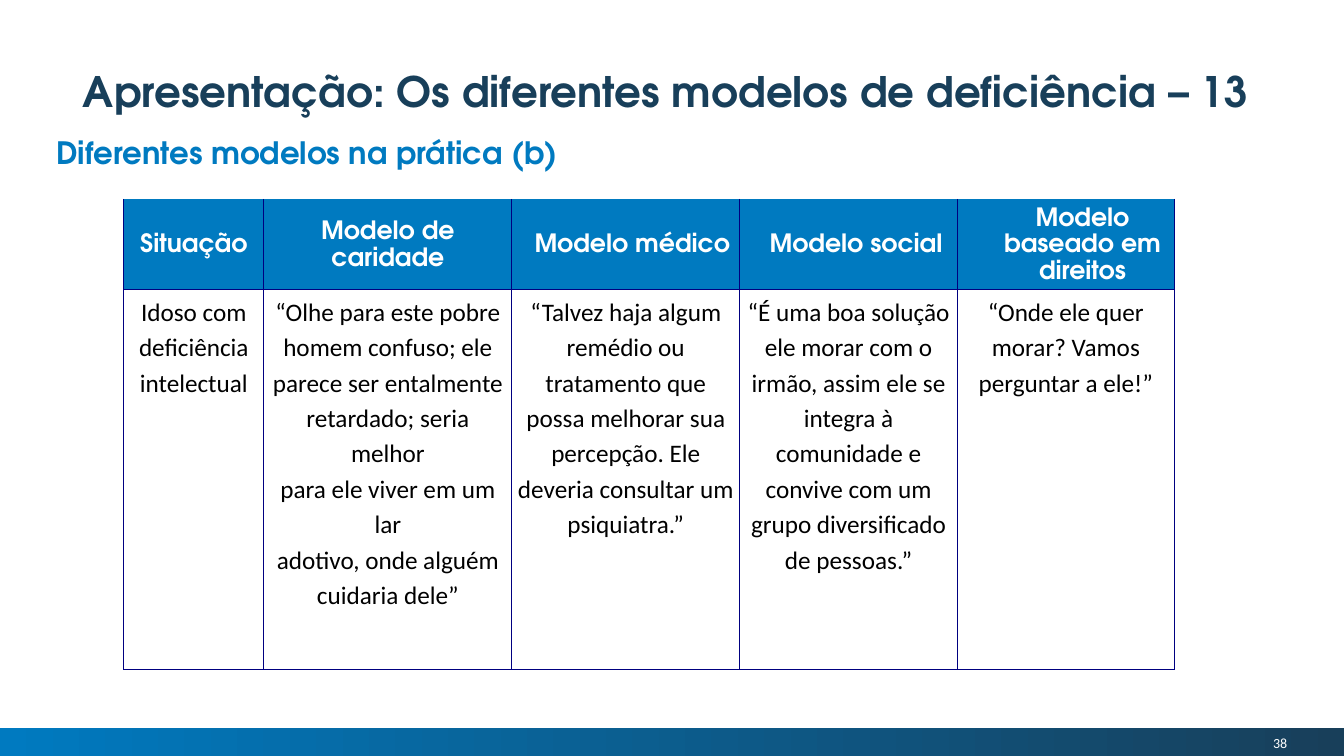
from dataclasses import dataclass

from lxml.etree import SubElement
from pptx import Presentation
from pptx.dml.color import RGBColor
from pptx.enum.shapes import MSO_SHAPE
from pptx.enum.text import MSO_ANCHOR, MSO_AUTO_SIZE, PP_ALIGN
from pptx.oxml import parse_xml
from pptx.oxml.ns import nsdecls, qn
from pptx.util import Cm, Pt


@dataclass(frozen=True)
class Theme:
    blue: str = "007AC0"
    navy: str = "183F5A"
    border: str = "000080"
    white: str = "FFFFFF"
    black: str = "000000"
    heading_font: str = "TeX Gyre Adventor"
    text_font: str = "Calibri"
    title_size: int = 30
    subtitle_size: int = 22
    table_size: int = 18
    number_size: int = 10


theme = Theme()


def write(para, text, font, size, color, bold=False, align=PP_ALIGN.CENTER, spacing=1.0):
    para.alignment = align
    para.line_spacing = spacing
    para.space_before = para.space_after = Pt(0)
    span = para.add_run()
    span.text = text
    span.font.name = font
    span.font.size = Pt(size)
    span.font.bold = bold
    span.font.color.rgb = RGBColor.from_string(color)


def set_up_frame(box, place, anchor, margins=(0, 0)):
    box.left, box.top, box.width, box.height = (Cm(length) for length in place)
    frame = box.text_frame
    frame.word_wrap = True
    frame.auto_size = MSO_AUTO_SIZE.NONE
    frame.vertical_anchor = anchor
    frame.margin_left = frame.margin_right = Cm(margins[0])
    frame.margin_top = frame.margin_bottom = Cm(margins[1])
    return frame.paragraphs[0]


deck = Presentation()
deck.slide_width, deck.slide_height = Cm(33.87), Cm(19.05)
page = deck.slides.add_slide(deck.slide_layouts[1])

# Footer bar and page number
bar = page.shapes.add_shape(MSO_SHAPE.RECTANGLE, 0, Cm(18.34), deck.slide_width, Cm(0.71))
bar.shadow.inherit = False
bar.line.fill.background()
bar.fill.gradient()
bar.fill.gradient_angle = 0
for stop, color in zip(bar.fill.gradient_stops, (theme.blue, theme.navy)):
    stop.color.rgb = RGBColor.from_string(color)

number = page.shapes.add_textbox(0, 0, 0, 0)
para = set_up_frame(number, (27.87, 18.42, 4.57, 0.6), MSO_ANCHOR.MIDDLE)
write(para, "38", theme.text_font, theme.number_size, theme.white, align=PP_ALIGN.RIGHT)

# Title and subtitle
para = set_up_frame(page.shapes.title, (1.09, 1.4, 31.37, 1.19), MSO_ANCHOR.TOP, (0.25, 0.13))
write(para, "Apresentação: Os diferentes modelos de deficiência – 13",
      theme.heading_font, theme.title_size, theme.navy, bold=True, spacing=1.1)

para = set_up_frame(page.placeholders[1], (1.42, 3.3, 31.04, 0.99), MSO_ANCHOR.BOTTOM)
properties = para._p.get_or_add_pPr()
properties.set("marL", str(Cm(0.79)))
properties.set("indent", str(-Cm(0.79)))
SubElement(properties, qn("a:buNone"))
write(para, "Diferentes modelos na prática (b)", theme.heading_font, theme.subtitle_size,
      theme.blue, bold=True, align=PP_ALIGN.LEFT, spacing=1.5)

# Table: width in cm, header, header indent in cm, quotation
columns = [
    (3.53, "Situação", 0, ["Idoso com deficiência intelectual"]),
    (6.25, "Modelo de caridade", 0, [
        "“Olhe para este pobre", "homem confuso; ele", "parece ser entalmente",
        "retardado; seria melhor", "para ele viver em um lar", "adotivo, onde alguém",
        "cuidaria dele”"]),
    (5.74, "Modelo médico", 0.33, [
        "“Talvez haja algum remédio ou tratamento que possa melhorar sua percepção. "
        "Ele deveria consultar um psiquiatra.”"]),
    (5.49, "Modelo social", 0.38, [
        "“É uma boa solução ele morar com o irmão, assim ele se integra à comunidade "
        "e convive com um grupo diversificado de pessoas.”"]),
    (5.46, "Modelo baseado em direitos", 0.84, [
        "“Onde ele quer morar? Vamos perguntar a ele!”"]),
]
row_heights = (2.29, 9.58)
table_width = sum(column[0] for column in columns)
table = page.shapes.add_table(2, len(columns), Cm(3.12), Cm(5.01),
                              Cm(table_width), Cm(sum(row_heights))).table
table.horz_banding = False
for row, height in zip(table.rows, row_heights):
    row.height = Cm(height)

for index, (width, header, indent, quotation) in enumerate(columns):
    table.columns[index].width = Cm(width)
    for row, lines in enumerate(([header], quotation)):
        is_header = row == 0
        cell = table.cell(row, index)
        cell.fill.solid()
        cell.fill.fore_color.rgb = RGBColor.from_string(theme.blue if is_header else theme.white)
        cell.vertical_anchor = MSO_ANCHOR.MIDDLE if is_header else MSO_ANCHOR.TOP
        margin = Cm(0 if is_header else 0.08)
        cell.margin_left = cell.margin_right = cell.margin_top = cell.margin_bottom = margin

        # Cell text
        for line_index, line in enumerate(lines):
            frame = cell.text_frame
            para = frame.add_paragraph() if line_index else frame.paragraphs[0]
            if is_header and indent:
                para._p.get_or_add_pPr().set("marL", str(Cm(indent)))
            write(para, line, theme.heading_font if is_header else theme.text_font,
                  theme.table_size, theme.white if is_header else theme.black,
                  bold=is_header, spacing=1.15)

        # Cell borders, with the top of the header left open
        for position, side in enumerate("LRTB"):
            paint = f'<a:solidFill><a:srgbClr val="{theme.border}"/></a:solidFill>'
            if is_header and side == "T":
                paint = "<a:noFill/>"
            edge = parse_xml(f'<a:ln{side} {nsdecls("a")} w="{Pt(1)}">{paint}</a:ln{side}>')
            cell._tc.get_or_add_tcPr().insert(position, edge)

deck.save("out.pptx")
